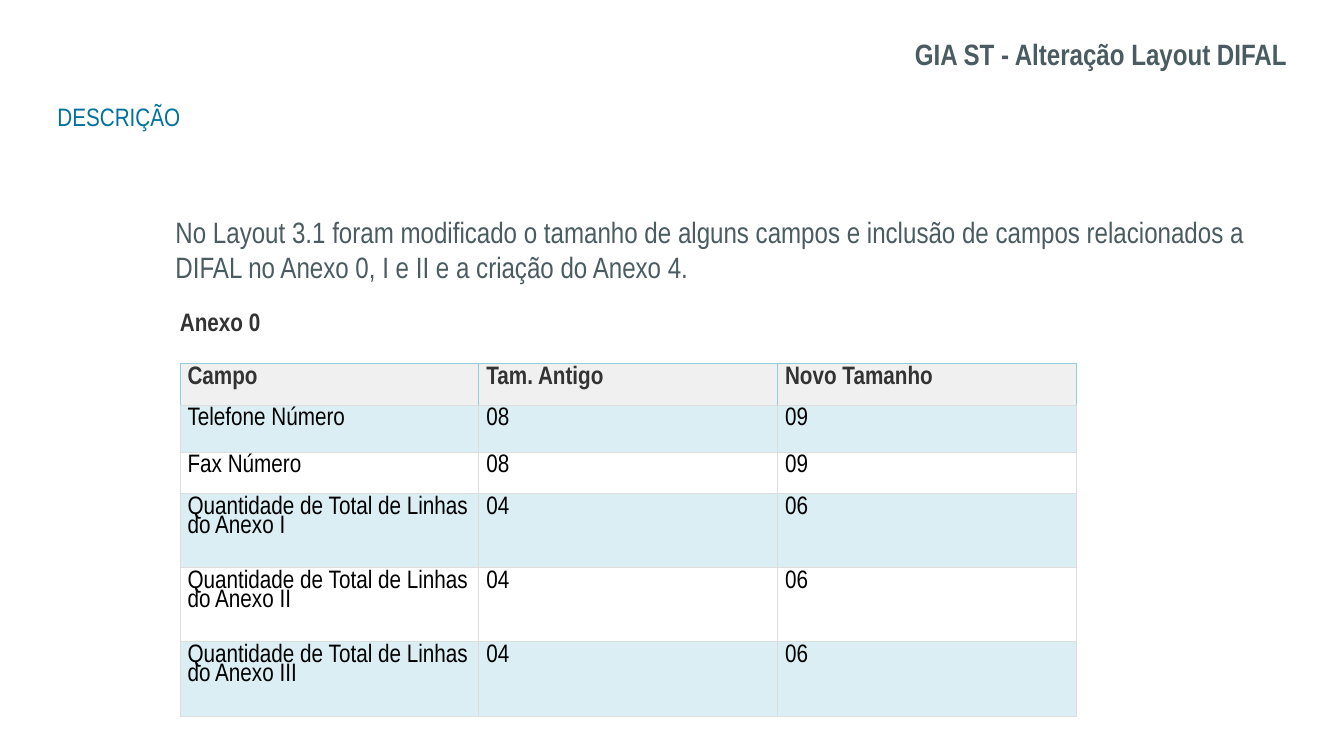
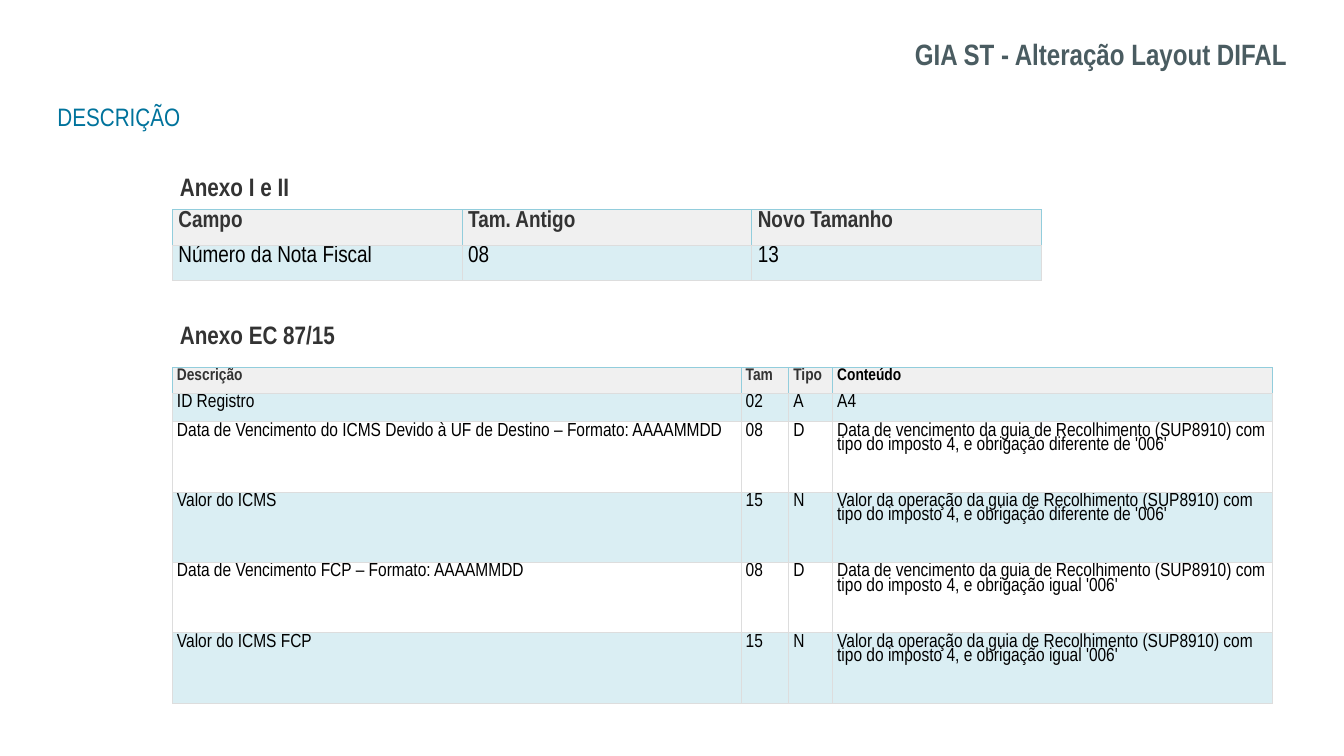
from lxml import etree
from pptx import Presentation
from pptx import util as u
from pptx.dml.color import RGBColor
from pptx.enum import shapes, text
from pptx.oxml.ns import qn

FONT = "Arial Narrow"
COLORS = {
    "title": "4A5C61",
    "section": "00739C",
    "heading": "333333",
    "text": "000000",
    "white": "FFFFFF",
    "header": "F0F0F0",
    "band": "DAEEF3",
    "grid": "DDDDDD",
    "header_edge": "92CDDC",
}
FIELD_HEADER = ["Campo", "Tam. Antigo", "Novo Tamanho"]
DUE = "Data de vencimento da guia de Recolhimento (SUP8910) com tipo do imposto 4, e obrigação "
VALUE = "Valor da operação da guia de Recolhimento (SUP8910) com tipo do imposto 4, e obrigação "


def rgb(name):
    return RGBColor.from_string(COLORS[name])


def place(shape, box):
    shape.left, shape.top, shape.width, shape.height = map(u.Inches, box)


def write(frame, content, size, color, bold=False, align=text.PP_ALIGN.LEFT,
          anchor=text.MSO_ANCHOR.TOP, spacing=None):
    """Fill a text frame or table cell frame with one formatted paragraph."""
    frame.word_wrap = True
    frame.vertical_anchor = anchor
    para = frame.paragraphs[0]
    para.alignment = align
    para.space_before = u.Pt(0)
    para.line_spacing = spacing
    span = para.add_run()
    span.text = content
    span.font.name = FONT
    span.font.size = u.Pt(size)
    span.font.bold = bold
    span.font.color.rgb = rgb(color)
    return para


def plain_body(shape, box, content, **style):
    """Body placeholder without bullet or hanging indent."""
    place(shape, box)
    shape.text_frame.auto_size = text.MSO_AUTO_SIZE.NONE
    para = write(shape.text_frame, content, **style)
    props = para._p.get_or_add_pPr()
    props.set("marL", "0")
    props.set("indent", "0")
    etree.SubElement(props, qn("a:buNone"))


def add_page(deck, layout):
    """Page with the shared title and section name."""
    page = deck.slides.add_slide(deck.slide_layouts[layout])
    title = page.shapes.title
    place(title, (3.63, 0.41, 13.48, 0.61))
    title.text_frame.auto_size = text.MSO_AUTO_SIZE.NONE
    write(title.text_frame, "GIA ST - Alteração Layout DIFAL", 28, "title", bold=True,
          align=text.PP_ALIGN.RIGHT, anchor=text.MSO_ANCHOR.MIDDLE)
    plain_body(page.placeholders[1], (0.66, 1.29, 3.68, 0.93), "DESCRIÇÃO",
               size=24, color="section")
    return page


def add_heading(page, box, content):
    """White label above a table."""
    label = page.shapes.add_shape(shapes.MSO_SHAPE.RECTANGLE, *map(u.Inches, box))
    label.shadow.inherit = False
    label.fill.solid()
    label.fill.fore_color.rgb = rgb("white")
    label.line.fill.background()
    label.text_frame.margin_top = u.Inches(0.07)
    write(label.text_frame, content, 24, "heading", bold=True)


def set_borders(cell, is_header):
    props = cell._tc.get_or_add_tcPr()
    for side in ("lnL", "lnR", "lnT", "lnB"):
        color = "header_edge" if is_header and side != "lnB" else "grid"
        line = etree.SubElement(props, qn("a:" + side), w=str(u.Pt(0.75)))
        fill = etree.SubElement(line, qn("a:solidFill"))
        etree.SubElement(fill, qn("a:srgbClr"), val=COLORS[color])


def add_banded_table(page, left, top, widths, heights, rows, size, insets,
                     header_size=None, black_headers=()):
    """Table with a grey header; insets are side, top and bottom, header right."""
    side, edge, header_right = insets
    frame = page.shapes.add_table(
        len(rows), len(widths), *map(u.Inches, (left, top, sum(widths), sum(heights))))
    table = frame.table
    table.horz_banding = False
    for column, width in zip(table.columns, widths):
        column.width = u.Inches(width)
    for number, (row, height, values) in enumerate(zip(table.rows, heights, rows)):
        row.height = u.Inches(height)
        is_header = number == 0
        fill = "header" if is_header else "band" if number % 2 else "white"
        for cell, value in zip(row.cells, values):
            set_borders(cell, is_header)
            cell.fill.solid()
            cell.fill.fore_color.rgb = rgb(fill)
            cell.margin_left = u.Inches(side)
            cell.margin_right = u.Inches(header_right if is_header else side)
            cell.margin_top = cell.margin_bottom = u.Inches(edge)
            dark = is_header and value not in black_headers
            write(cell.text_frame, value, (header_size or size) if is_header else size,
                  "heading" if dark else "text", bold=is_header, spacing=0.8)


def field_sizes_page(deck):
    page = add_page(deck, 3)
    # Introduction
    intro = page.placeholders[2]
    plain_body(intro, (2.22, 2.23, 14.9, 6.35),
               "No Layout 3.1 foram modificado o tamanho de alguns campos e inclusão de "
               "campos relacionados a DIFAL no Anexo 0, I e II e a criação do Anexo 4.",
               size=28, color="title")
    intro.text_frame.margin_top = u.Inches(0.6)
    # Anexo 0
    totals = [[f"Quantidade de Total de Linhas do Anexo {number}", "04", "06"]
              for number in ("I", "II", "III")]
    rows = [FIELD_HEADER, ["Telefone Número", "08", "09"], ["Fax Número", "08", "09"], *totals]
    add_banded_table(page, 2.38, 4.81, [3.95] * 3, [0.55, 0.62, 0.55] + [0.98] * 3,
                     rows, 24, (0.1, 0.07, 0.16))
    add_heading(page, (2.28, 3.98, 1.35, 0.81), "Anexo 0")


def annexes_page(deck):
    page = add_page(deck, 1)
    # Anexo I e II
    add_heading(page, (2.28, 2.19, 3.88, 0.81), "Anexo I e II")
    add_banded_table(page, 2.28, 2.77, [3.83] * 3, [0.47] * 2,
                     [FIELD_HEADER, ["Número da Nota Fiscal", "08", "13"]],
                     22, (0.08, 0.05, 0.12))
    # Anexo EC 87/15
    add_heading(page, (2.28, 4.16, 3.88, 0.81), "Anexo EC 87/15")
    rows = [
        ["Descrição", "Tam", "Tipo", "Conteúdo"],
        ["ID Registro", "02", "A", "A4"],
        ["Data de Vencimento do ICMS Devido à UF de Destino – Formato: AAAAMMDD",
         "08", "D", DUE + "diferente de '006'"],
        ["Valor do ICMS", "15", "N", VALUE + "diferente de '006'"],
        ["Data de Vencimento FCP – Formato: AAAAMMDD", "08", "D", DUE + "igual '006'"],
        ["Valor do ICMS FCP", "15", "N", VALUE + "igual '006'"],
    ]
    add_banded_table(page, 2.28, 4.86, [7.52, 0.63, 0.58, 5.82], [0.34, 0.38] + [0.93] * 4,
                     rows, 18, (0.06, 0.04, 0.09), header_size=16,
                     black_headers=("Conteúdo",))


def main():
    deck = Presentation()
    deck.slide_width, deck.slide_height = u.Inches(17.77), u.Inches(10)
    field_sizes_page(deck)
    annexes_page(deck)
    deck.save("out.pptx")


if __name__ == "__main__":
    main()
